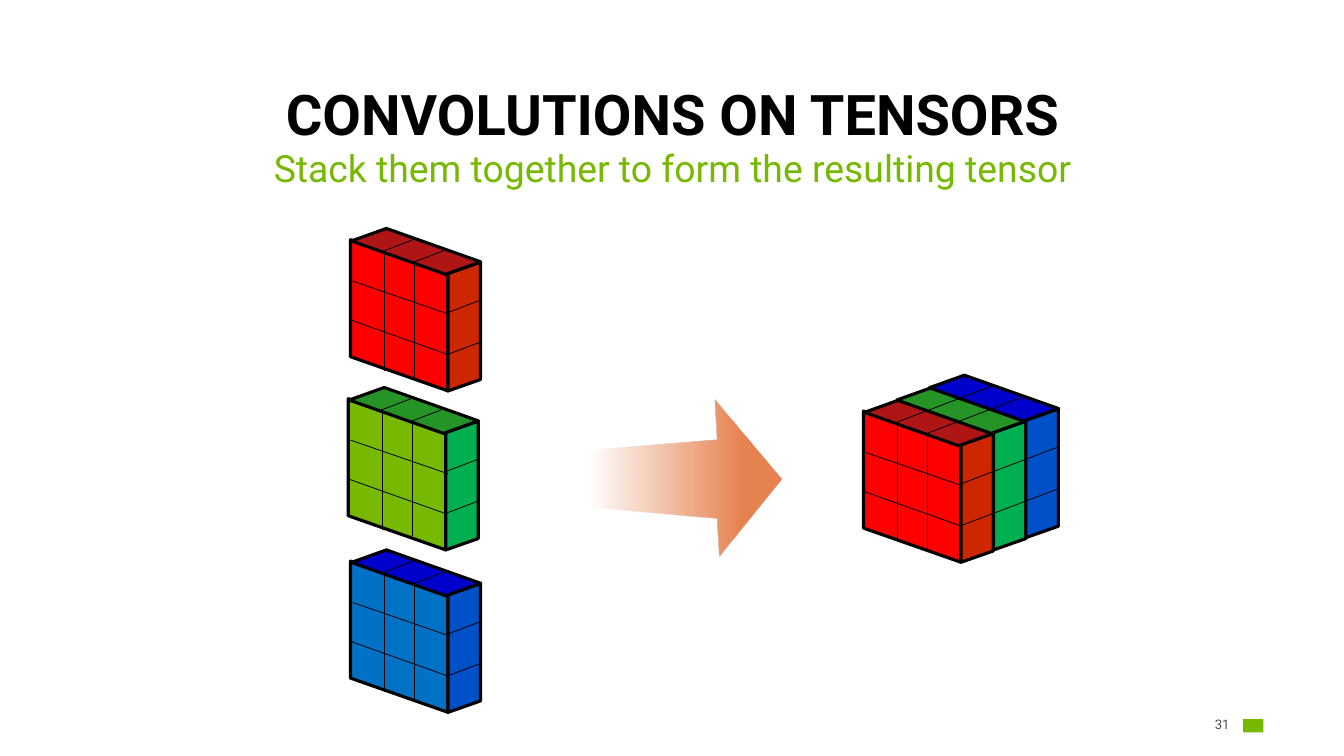
from lxml import etree
from pptx import Presentation
from pptx import util as u
from pptx.dml.color import RGBColor
from pptx.enum import shapes, text
from pptx.oxml.ns import qn

COLUMNS, ROWS = 12, 6.75
CELL = u.Inches(1)

COLORS = {
    "ink": "000000",
    "accent": "76B900",
    "number": "505050",
    "arrow": "E68250",
}
LAYERS = {
    "red": {"front": "FF0000", "side": "CC2700", "top": "AF1515"},
    "green": {"front": "76B900", "side": "00B050", "top": "259325"},
    "blue": {"front": "0071C5", "side": "0051C8", "top": "0000CC"},
}

DEPTH_STEP = (0.29, -0.11)
FACES = {
    "front": {"box": (-0.25, 0.24, 1.35, 0.87), "turn": 270, "slant": 0.351},
    "side": {"box": (0.43, 0.63, 1.15, 0.29), "turn": 90, "slant": 0.351, "mirrored": True},
    "top": {"box": (0, 0, 1.15, 0.21), "turn": 19.5, "slant": 1.226},
}
FRONT_GRID = [
    ((0.29, 0.12), (0.29, 1.17)),
    ((0.56, 0.2), (0.56, 1.23)),
    ((0.01, 0.37), (0.88, 0.67)),
    ((0, 0.72), (0.87, 1.03)),
]
DEPTH_STARTS = [(0.26, 0.11), (0.53, 0.21), (0.86, 0.65), (0.87, 1.02)]


def cells(*counts):
    return [round(count * CELL) for count in counts]


def rgb(value):
    return RGBColor.from_string(value)


def write(frame, words, size, color, bold=False, align="CENTER", anchor="TOP",
          spacing=0.9, margins=None):
    frame.word_wrap = True
    frame.auto_size = text.MSO_AUTO_SIZE.NONE
    frame.vertical_anchor = text.MSO_ANCHOR[anchor]
    if margins is not None:
        frame.margin_left = frame.margin_right = margins
        frame.margin_top = frame.margin_bottom = margins
    paragraph = frame.paragraphs[0]
    paragraph.text = words
    paragraph.alignment = text.PP_ALIGN[align]
    paragraph.line_spacing = spacing
    paragraph.space_before = u.Pt(0)
    font = paragraph.runs[0].font
    font.name, font.size, font.bold = "Roboto", u.Pt(size), bold
    font.color.rgb = rgb(color)


def place(holder, left, top, width, height):
    holder.left, holder.top, holder.width, holder.height = cells(left, top, width, height)


def add_face(slide, origin, color, box, turn, slant, mirrored=False):
    left, top, width, height = box
    face = slide.shapes.add_shape(
        shapes.MSO_SHAPE.PARALLELOGRAM,
        *cells(origin[0] + left, origin[1] + top, width, height))
    face.adjustments[0] = slant
    face.rotation = turn
    if mirrored:
        face._element.spPr.xfrm.set("flipV", "1")
    face.shadow.inherit = False
    face.fill.solid()
    face.fill.fore_color.rgb = rgb(color)
    face.line.color.rgb = rgb(COLORS["ink"])
    face.line.width = u.Pt(2)


def add_rule(slide, origin, start, end):
    x, y = origin
    rule = slide.shapes.add_connector(
        shapes.MSO_CONNECTOR.STRAIGHT,
        *cells(x + start[0], y + start[1], x + end[0], y + end[1]))
    rule.line.color.rgb = rgb(COLORS["ink"])
    rule.line.width = u.Pt(0.5)
    etree.SubElement(rule._element.spPr, qn("a:effectLst"))


def add_tensor(slide, origin, layers):
    x, y = origin
    dx, dy = DEPTH_STEP
    add_face(slide, origin, LAYERS[layers[0]]["front"], **FACES["front"])
    for part in ("side", "top"):
        for depth, layer in enumerate(layers):
            corner = (x + depth * dx, y + depth * dy)
            add_face(slide, corner, LAYERS[layer][part], **FACES[part])
    for start, end in FRONT_GRID:
        add_rule(slide, origin, start, end)
    for left, top in DEPTH_STARTS:
        end = (left + len(layers) * dx, top + len(layers) * dy)
        add_rule(slide, origin, (left, top), end)


def add_fading_arrow(slide, outline, color):
    points = [cells(*point) for point in outline]
    builder = slide.shapes.build_freeform(*points[0])
    builder.add_line_segments(points[1:], close=True)
    arrow = builder.convert_to_shape()
    arrow.shadow.inherit = False
    arrow.line.fill.background()
    arrow.fill.gradient()
    arrow.fill.gradient_angle = 0
    clear, solid = arrow.fill.gradient_stops
    clear.position, solid.position = 0, 0.8
    for stop in (clear, solid):
        stop.color.rgb = rgb(color)
    clear_color = arrow._element.spPr.find(".//" + qn("a:srgbClr"))
    etree.SubElement(clear_color, qn("a:alpha"), val="0")


def add_footer(slide):
    number = slide.shapes.add_textbox(*cells(10.68, 6.38, 0.3, 0.18))
    write(number.text_frame, "31", 8.5, COLORS["number"], align="RIGHT",
          anchor="MIDDLE", spacing=1, margins=0)
    mark = slide.shapes.add_shape(shapes.MSO_SHAPE.RECTANGLE, *cells(11.1, 6.42, 0.18, 0.12))
    mark.shadow.inherit = False
    mark.fill.solid()
    mark.fill.fore_color.rgb = rgb(COLORS["accent"])
    mark.line.fill.background()


def main():
    deck = Presentation()
    deck.slide_width, deck.slide_height = cells(COLUMNS, ROWS)
    slide = deck.slides.add_slide(deck.slide_layouts.get_by_name("Section Header"))
    title, subtitle = slide.placeholders
    place(title, 0.55, 0.72, 10.91, 0.65)
    write(title.text_frame, "CONVOLUTIONS ON TENSORS", 36, COLORS["ink"],
          bold=True, anchor="BOTTOM")
    place(subtitle, 0.55, 1.29, 10.91, 0.57)
    write(subtitle.text_frame, "Stack them together to form the resulting tensor",
          24, COLORS["accent"])

    add_tensor(slide, (3.14, 2.14), ["red"])
    add_tensor(slide, (3.12, 3.56), ["green"])
    add_tensor(slide, (3.14, 5.01), ["blue"])
    add_fading_arrow(slide, [
        (5.27, 4.02), (6.4, 3.93), (6.38, 3.57), (6.98, 4.28),
        (6.42, 4.97), (6.4, 4.63), (5.27, 4.53),
    ], COLORS["arrow"])
    add_tensor(slide, (7.72, 3.67), ["red", "green", "blue"])
    add_footer(slide)
    deck.save("out.pptx")


if __name__ == "__main__":
    main()
